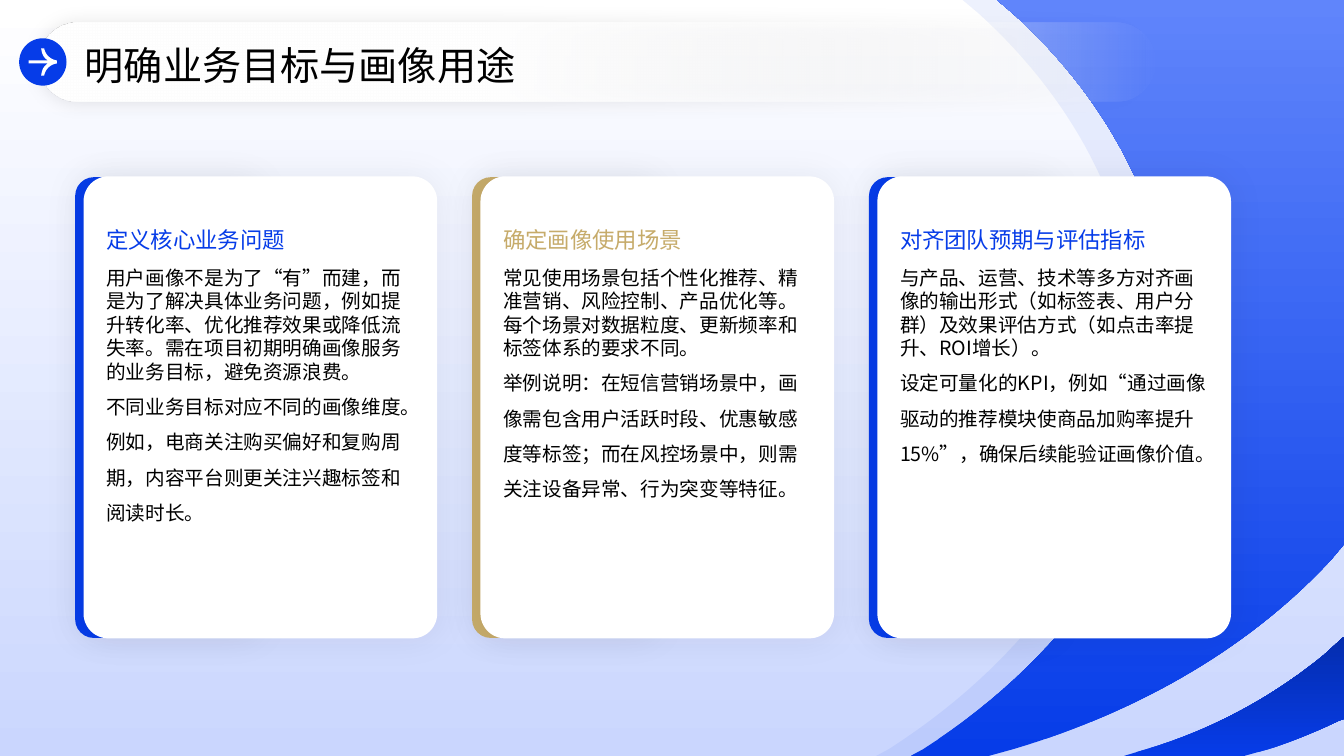
import dataclasses

import pptx
import pptx.dml.color
import pptx.enum.shapes
import pptx.enum.text
import pptx.oxml
import pptx.oxml.ns
import pptx.util
from lxml import etree

# Grid: 160 columns by 90 rows of square cells
COLS, ROWS = 160, 90
CELL = pptx.util.Inches(1) // 12
SHAPE = pptx.enum.shapes.MSO_SHAPE
ANCHOR = pptx.enum.text.MSO_ANCHOR
qn = pptx.oxml.ns.qn


@dataclasses.dataclass(frozen=True)
class Theme:
    font: str = "Noto Sans CJK SC"
    blue: str = "063CE8"
    light_blue: str = "6085FB"
    dark_blue: str = "052DAE"
    pale: str = "CAD6FE"
    gold: str = "C6AB6A"
    white: str = "FFFFFF"
    black: str = "000000"
    title: int = 28
    heading: int = 16
    body: int = 14


T = Theme()

# Outlines in grid cells: two numbers make a line, six make a curve
SWOOSH = [(118.7, 0), (160, 0), (160, 64.8), (158.5, 66.6),
          (149.2, 76.7, 136.1, 84.6, 120.6, 89.2), (117.7, 90),
          (108.4, 90), (109.9, 89.2),
          (128, 77.6, 139.6, 60.5, 139.6, 41.3),
          (139.6, 26.3, 132.5, 12.4, 120.6, 1.6)]
CORNER = [(160, 75.8), (160, 85.6), (159.4, 85.8),
          (156.7, 87.1, 153.8, 88.3, 151, 89.2), (148.1, 90),
          (133.8, 90), (135.8, 89.4),
          (143.9, 87.1, 151.2, 83.2, 157.6, 78)]
# Arrow around its own centre
ARROW = [(-1.68, -0.18), (0.6, -0.18), (0.1, -0.5, -0.1, -0.9, -0.2, -1.62),
         (0.16, -1.62), (0.3, -0.9, 0.85, -0.3, 1.68, -0.18),
         (1.68, 0.18), (0.85, 0.3, 0.3, 0.9, 0.16, 1.62),
         (-0.2, 1.62), (-0.1, 0.9, 0.1, 0.5, 0.6, 0.18), (-1.68, 0.18)]

CARDS = [
    (T.blue, "定义核心业务问题",
     "用户画像不是为了“有”而建，而是为了解决具体业务问题，例如提升转化率、优化推荐效果或降低流失率。需在项目初期明确画像服务的业务目标，避免资源浪费。",
     "不同业务目标对应不同的画像维度。例如，电商关注购买偏好和复购周期，内容平台则更关注兴趣标签和阅读时长。"),
    (T.gold, "确定画像使用场景",
     "常见使用场景包括个性化推荐、精准营销、风险控制、产品优化等。每个场景对数据粒度、更新频率和标签体系的要求不同。",
     "举例说明：在短信营销场景中，画像需包含用户活跃时段、优惠敏感度等标签；而在风控场景中，则需关注设备异常、行为突变等特征。"),
    (T.blue, "对齐团队预期与评估指标",
     "与产品、运营、技术等多方对齐画像的输出形式（如标签表、用户分群）及效果评估方式（如点击率提升、ROI增长）。",
     "设定可量化的KPI，例如“通过画像驱动的推荐模块使商品加购率提升15%”，确保后续能验证画像价值。"),
]
CARD_LEFT, CARD_PITCH = 10, 47.25


def grid(*cells):
    return [pptx.util.Emu(round(c * CELL)) for c in cells]


def rgb(color):
    return pptx.dml.color.RGBColor.from_string(color)


def set_alpha(parent, percent):
    color = next(parent.iter(qn("a:srgbClr")))
    etree.SubElement(color, qn("a:alpha"), val=str(percent * 1000))


def paint(sp, color, alpha=None):
    sp.shadow.inherit = False
    sp.line.fill.background()
    sp.fill.solid()
    sp.fill.fore_color.rgb = rgb(color)
    if alpha is not None:
        set_alpha(sp._element.spPr, alpha)


def paint_gradient(sp, start, end, angle, end_at=1):
    """Angle in degrees, counter-clockwise."""
    sp.shadow.inherit = False
    sp.line.fill.background()
    sp.fill.gradient()
    sp.fill.gradient_angle = angle
    stops = sp.fill.gradient_stops
    for stop, color, at in zip(stops, (start, end), (0, end_at)):
        stop.color.rgb = rgb(color)
        stop.position = at


def add_glow(sp, alpha, blur):
    effects = sp._element.spPr.find(qn("a:effectLst"))
    shadow = etree.SubElement(effects, qn("a:outerShdw"), dist="0", dir="0",
                              blurRad=str(pptx.util.Pt(blur)), algn="ctr", rotWithShape="0")
    etree.SubElement(shadow, qn("a:srgbClr"), val=T.black)
    set_alpha(shadow, alpha)


def add_preset(s, kind, box, corner=None):
    sp = s.shapes.add_shape(kind, *grid(*box))
    if corner is not None:
        sp.adjustments[0] = corner
    return sp


def add_outline(s, outline, dx=0, dy=0, steps=32):
    points = [outline[0]]
    for x1, y1, *rest in outline[1:]:
        if not rest:
            points.append((x1, y1))
            continue
        x0, y0 = points[-1]
        x2, y2, x3, y3 = rest
        for i in range(1, steps + 1):
            t = i / steps
            weights = (1 - t) ** 3, 3 * t * (1 - t) ** 2, 3 * t * t * (1 - t), t ** 3
            points.append(tuple(sum(w * v for w, v in zip(weights, axis))
                                for axis in ((x0, x1, x2, x3), (y0, y1, y2, y3))))
    points = [grid(x + dx, y + dy) for x, y in points]
    builder = s.shapes.build_freeform(*points[0])
    builder.add_line_segments(points[1:], close=True)
    return builder.convert_to_shape()


def set_text(sp, lines, size, color, anchor=ANCHOR.TOP):
    """Lines are pairs of text and line spacing."""
    tf = sp.text_frame
    tf.word_wrap = True
    tf.auto_size = pptx.enum.text.MSO_AUTO_SIZE.NONE
    tf.vertical_anchor = anchor
    tf.margin_left = tf.margin_top = tf.margin_right = tf.margin_bottom = 0
    for i, (text, spacing) in enumerate(lines):
        p = tf.add_paragraph() if i else tf.paragraphs[0]
        p.text = text
        p.alignment = pptx.enum.text.PP_ALIGN.LEFT
        p.line_spacing = spacing
        p.space_before = pptx.util.Pt(0)
        p.font.size = pptx.util.Pt(size)
        p.font.color.rgb = rgb(color)
        p.font.name = T.font
        latin = next(p._p.iter(qn("a:latin")))
        latin.addnext(latin.makeelement(qn("a:ea"), {"typeface": T.font}))


def add_text(s, box, lines, size, color, anchor=ANCHOR.TOP):
    set_text(s.shapes.add_textbox(*grid(*box)), lines, size, color, anchor)


def add_background(s):
    paint_gradient(add_preset(s, SHAPE.RECTANGLE, (0, 0, COLS, ROWS)), T.white, T.pale, 270)
    paint(add_outline(s, SWOOSH, dx=-4.1), T.blue, alpha=7)
    paint_gradient(add_outline(s, SWOOSH), T.blue, T.light_blue, 90)
    paint_gradient(add_outline(s, CORNER), T.blue, T.dark_blue, 90)


def add_card(s, left, accent, heading, first, second):
    back = add_preset(s, SHAPE.ROUNDED_RECTANGLE, (left - 1.05, 21.1, 22.2, 54.85), 0.1)
    front = add_preset(s, SHAPE.ROUNDED_RECTANGLE, (left - 0.05, 21, 42.1, 55), 0.07)
    for sp, color in ((back, accent), (front, T.white)):
        paint(sp, color)
        add_glow(sp, alpha=5, blur=25)
    add_text(s, (left + 2.65, 22.7, 36.6, 7.4), [(heading, 1.2)], T.heading, accent, ANCHOR.BOTTOM)
    add_text(s, (left + 2.65, 31.6, 36.6, 41.6), [(first, 1.0), (second, 1.5)], T.body, T.black)


def add_title(s, text):
    bar = add_preset(s, SHAPE.ROUNDED_RECTANGLE, (4.56, 2.64, 133, 9.48), 0.5)
    paint_gradient(bar, T.white, T.white, 180, end_at=0.6)
    set_alpha(bar._element.spPr, 0)
    add_glow(bar, alpha=10, blur=13)
    # Title placeholder, brought in front of the bar
    title = s.shapes.title
    title.left, title.top, title.width, title.height = grid(10.1, 4.56, 120.2, 5.64)
    set_text(title, [(text, 1.1)], T.title, T.black, ANCHOR.MIDDLE)
    s.shapes._spTree.append(title._element)
    # Arrow badge
    paint(add_preset(s, SHAPE.OVAL, (2.28, 4.56, 5.64, 5.64)), T.blue)
    paint(add_outline(s, ARROW, dx=5.1, dy=7.38), T.white)


def main():
    prs = pptx.Presentation()
    prs.slide_width, prs.slide_height = grid(COLS, ROWS)
    s = prs.slides.add_slide(prs.slide_layouts[5])
    add_background(s)
    for i, card in enumerate(CARDS):
        add_card(s, CARD_LEFT + i * CARD_PITCH, *card)
    add_title(s, "明确业务目标与画像用途")
    prs.save("out.pptx")


if __name__ == "__main__":
    main()
